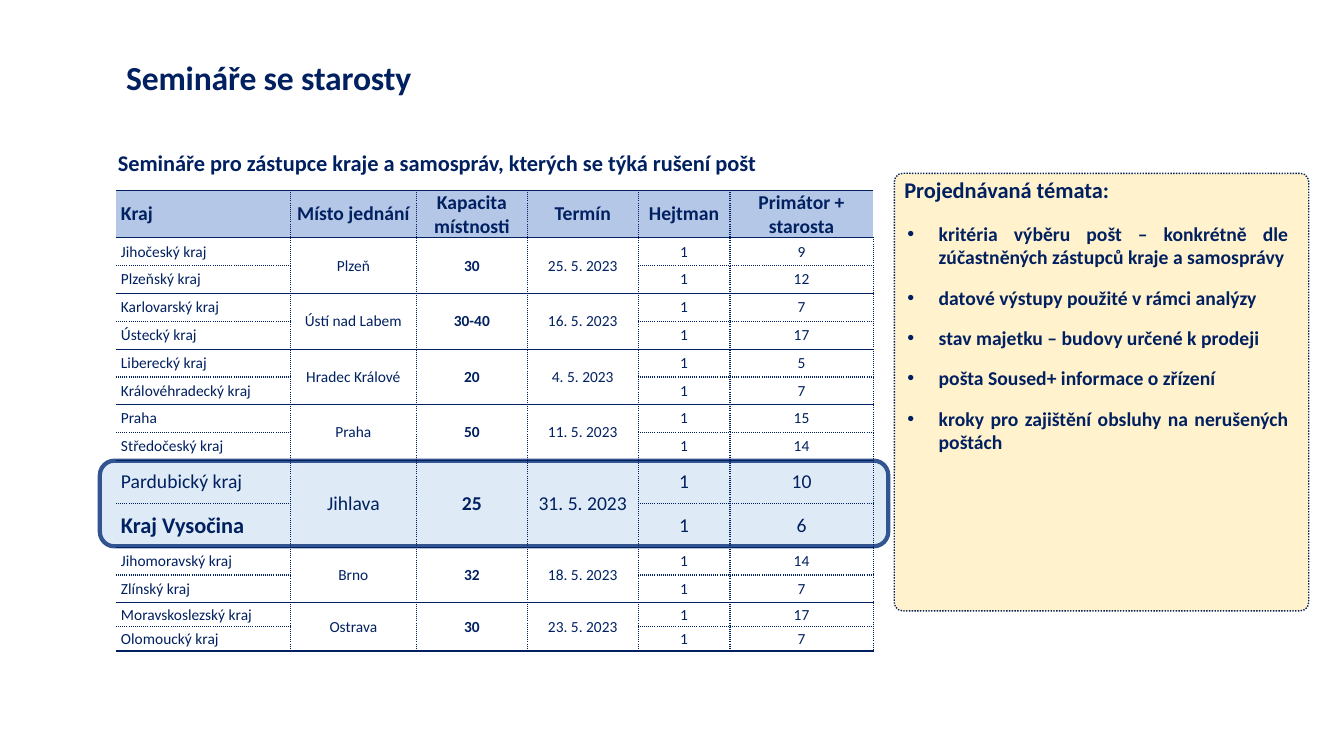
from lxml.etree import SubElement
from pptx import Presentation
from pptx.dml.color import RGBColor
from pptx.enum.dml import MSO_LINE
from pptx.enum.shapes import MSO_SHAPE
from pptx.enum.text import MSO_ANCHOR, MSO_AUTO_SIZE, PP_ALIGN
from pptx.oxml.ns import qn
from pptx.util import Inches, Pt

NAVY = RGBColor(0x00, 0x20, 0x60)
PANEL_EDGE = RGBColor(0x00, 0x21, 0x58)
HIGHLIGHT_EDGE = RGBColor(0x32, 0x54, 0x91)
HIGHLIGHT_FILL = RGBColor(0xDE, 0xEB, 0xF7)
HEADER_FILL = RGBColor(0xB4, 0xC7, 0xE7)
PANEL_FILL = RGBColor(0xFF, 0xF2, 0xCC)

COLUMN_WIDTHS = [1.73, 1.25, 1.1, 1.1, 0.91, 1.42]
HEADER_HEIGHT = 0.47
REGION_HEIGHT = 2.21 / 8
HOST_HEIGHT = 0.43
LAST_HEIGHT = 0.24
HEADERS = ["Kraj", "Místo jednání", "Kapacita místnosti", "Termín",
           "Hejtman", "Primátor + starosta"]
SEMINARS = [
    ("Plzeň", "30", "25. 5. 2023", [("Jihočeský kraj", "9"), ("Plzeňský kraj", "12")]),
    ("Ústí nad Labem", "30-40", "16. 5. 2023", [("Karlovarský kraj", "7"), ("Ústecký kraj", "17")]),
    ("Hradec Králové", "20", "4. 5. 2023", [("Liberecký kraj", "5"), ("Královéhradecký kraj", "7")]),
    ("Praha", "50", "11. 5. 2023", [("Praha", "15"), ("Středočeský kraj", "14")]),
    ("Jihlava", "25", "31. 5. 2023", [("Pardubický kraj", "10"), ("Kraj Vysočina", "6")]),
    ("Brno", "32", "18. 5. 2023", [("Jihomoravský kraj", "14"), ("Zlínský kraj", "7")]),
    ("Ostrava", "30", "23. 5. 2023", [("Moravskoslezský kraj", "17"), ("Olomoucký kraj", "7")]),
]
TOPICS = [
    "kritéria výběru pošt – konkrétně dle zúčastněných zástupců kraje a samosprávy",
    "datové výstupy použité v rámci analýzy",
    "stav majetku – budovy určené k prodeji",
    "pošta Soused+ informace o zřízení",
    "kroky pro zajištění obsluhy na nerušených poštách",
]


class SeminarSlide:
    font_name = "Calibri"

    def __init__(self, presentation):
        self.slide = presentation.slides.add_slide(presentation.slide_layouts[1])

    def add_text(self, paragraph, text, size, bold=True):
        run = paragraph.add_run()
        run.text = text
        run.font.name = self.font_name
        run.font.size = Pt(size)
        run.font.bold = bold
        run.font.color.rgb = NAVY
        return run

    def place(self, placeholder, box):
        placeholder.left, placeholder.top, placeholder.width, placeholder.height = map(Inches, box)
        placeholder.element.getparent().append(placeholder.element)
        placeholder.text_frame.word_wrap = True
        placeholder.text_frame.auto_size = MSO_AUTO_SIZE.NONE
        return placeholder.text_frame

    def title(self, text, box):
        frame = self.place(self.slide.shapes.title, box)
        frame.vertical_anchor = MSO_ANCHOR.BOTTOM
        paragraph = frame.paragraphs[0]
        paragraph.alignment = PP_ALIGN.LEFT
        heading = self.add_text(paragraph, text, 24)
        heading._r.get_or_add_rPr().set("spc", "-10")

    def bullets(self, items, box):
        frame = self.place(self.slide.placeholders[1], box)
        frame.vertical_anchor = MSO_ANCHOR.TOP
        for index, item in enumerate(items):
            paragraph = frame.add_paragraph() if index else frame.paragraphs[0]
            properties = paragraph._p.get_or_add_pPr()
            properties.set("marL", str(Inches(0.31)))
            properties.set("indent", str(Inches(-0.31)))
            SubElement(properties, qn("a:buFont")).set("typeface", "Arial")
            SubElement(properties, qn("a:buChar")).set("char", "•")
            paragraph.alignment = PP_ALIGN.JUSTIFY
            paragraph.space_before = Pt(0)
            paragraph.space_after = Pt(12)
            self.add_text(paragraph, item, 14)

    def label(self, text, box):
        frame = self.slide.shapes.add_textbox(*map(Inches, box)).text_frame
        frame.word_wrap = True
        self.add_text(frame.paragraphs[0], text, 16)

    def panel(self, box, fill, edge, width, dash=MSO_LINE.SOLID, corner=0.17):
        panel = self.slide.shapes.add_shape(MSO_SHAPE.ROUNDED_RECTANGLE, *map(Inches, box))
        panel.shadow.inherit = False
        panel.adjustments[0] = corner
        panel.fill.solid()
        panel.fill.fore_color.rgb = fill
        panel.line.color.rgb = edge
        panel.line.width = Pt(width)
        panel.line.dash_style = dash

    def table(self, rows, heights, widths, left, top):
        frame = self.slide.shapes.add_table(
            len(rows), len(widths), Inches(left), Inches(top),
            Inches(sum(widths)), Inches(sum(heights)))
        table = frame.table
        table.first_row = table.horz_banding = False
        for column, width in zip(table.columns, widths):
            column.width = Inches(width)
        for row, height in zip(table.rows, heights):
            row.height = Inches(height)
        for row_index, row in enumerate(rows):
            for column_index, content in enumerate(row):
                cell = table.cell(row_index, column_index)
                self.cell(cell, content, column_index)
                self.borders(cell, row_index, column_index)
                if row_index:
                    cell.fill.background()
                else:
                    cell.fill.solid()
                    cell.fill.fore_color.rgb = HEADER_FILL
        for first in range(1, len(rows), 2):
            for column_index in (1, 2, 3):
                table.cell(first, column_index).merge(table.cell(first + 1, column_index))

    def cell(self, cell, content, column):
        cell.margin_left = cell.margin_right = Inches(0.05)
        cell.margin_top = cell.margin_bottom = 0
        cell.vertical_anchor = MSO_ANCHOR.MIDDLE
        paragraph = cell.text_frame.paragraphs[0]
        paragraph.alignment = PP_ALIGN.CENTER if column else PP_ALIGN.LEFT
        if content:
            self.add_text(paragraph, *content)

    def borders(self, cell, row, column):
        second = row > 0 and row % 2 == 0
        merged = column in (1, 2, 3)
        inner = None if merged else "sysDot"
        styles = {
            "a:lnL": "sysDot" if column else None,
            "a:lnR": "sysDot" if row or column < 5 else None,
            "a:lnT": inner if second else "solid",
            "a:lnB": "solid" if second or merged or row == 0 else "sysDot",
        }
        for tag, dash in styles.items():
            line = SubElement(cell._tc.get_or_add_tcPr(), qn(tag), w=str(Pt(1)))
            if dash:
                fill = SubElement(line, qn("a:solidFill"))
                SubElement(fill, qn("a:srgbClr"), val=str(NAVY))
                SubElement(line, qn("a:prstDash"), val=dash)
            else:
                SubElement(line, qn("a:noFill"))


def seminar_rows():
    rows = [[(header, 14, True) for header in HEADERS]]
    heights = [HEADER_HEIGHT]
    for place, capacity, date, regions in SEMINARS:
        is_host = place == "Jihlava"
        size = 14 if is_host else 11
        height = HOST_HEIGHT if is_host else LAST_HEIGHT if place == "Ostrava" else REGION_HEIGHT
        shared = [(place, size, False), (capacity, size, True), (date, size, False)]
        for region, mayors in regions:
            name = (region, 16, True) if region == "Kraj Vysočina" else (region, size, False)
            rows.append([name, *shared, ("1", size, False), (mayors, size, False)])
            heights.append(height)
            shared = [None] * 3
    return rows, heights


def main():
    presentation = Presentation()
    presentation.slide_width = Inches(13.33)
    presentation.slide_height = Inches(7.5)
    seminars = SeminarSlide(presentation)
    seminars.panel((0.99, 4.57, 7.82, 0.85), HIGHLIGHT_FILL, HIGHLIGHT_EDGE, 3)
    seminars.title("Semináře se starosty", (1.15, 0.51, 11.18, 0.5))
    seminars.label("Semináře pro zástupce kraje a samospráv, kterých se týká rušení pošt",
                   (1.07, 1.43, 6.73, 0.37))
    rows, heights = seminar_rows()
    seminars.table(rows, heights, COLUMN_WIDTHS, 1.15, 1.89)
    seminars.panel((8.87, 1.72, 4.11, 4.34), PANEL_FILL, PANEL_EDGE, 1,
                   MSO_LINE.ROUND_DOT, 0.02)
    seminars.label("Projednávaná témata:", (8.87, 1.7, 4.11, 0.37))
    seminars.bullets(TOPICS, (8.9, 2.15, 3.98, 2.42))
    presentation.save("out.pptx")


if __name__ == "__main__":
    main()
